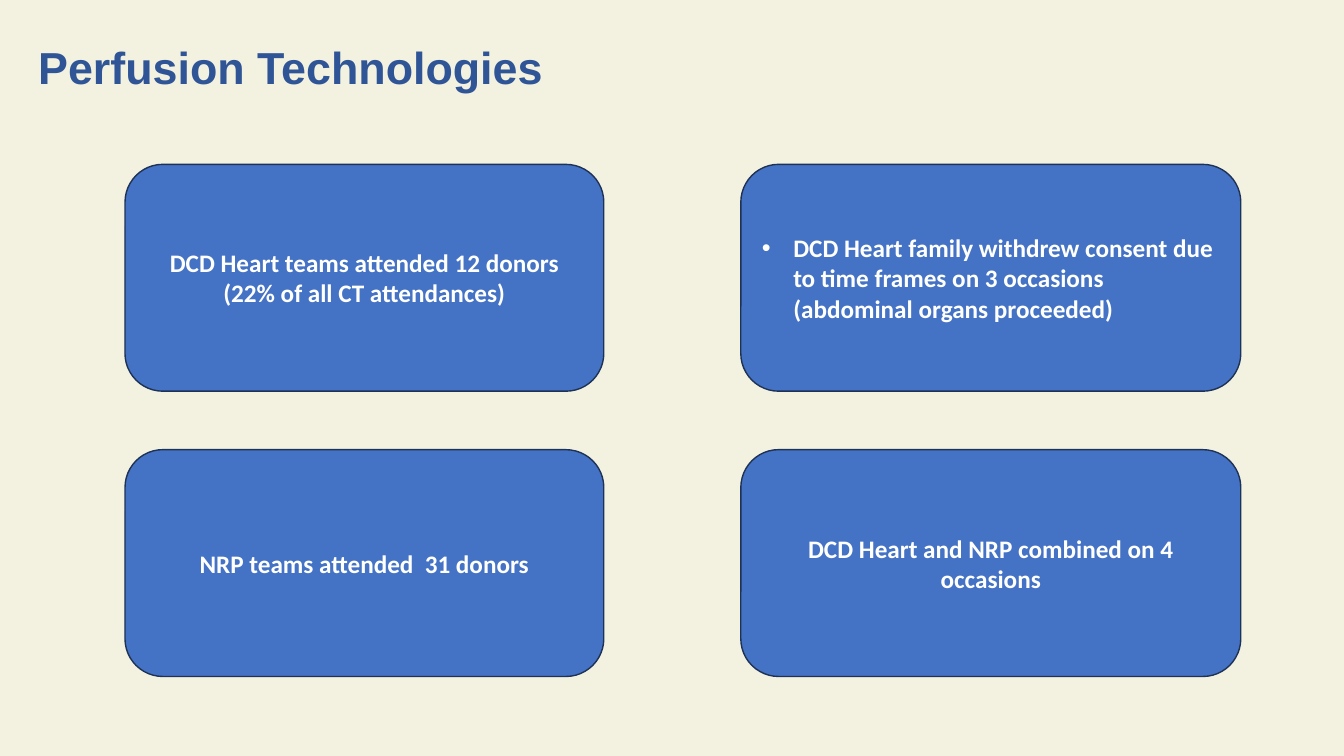
from lxml import etree
from pptx import Presentation
from pptx import util as u
from pptx.dml import color
from pptx.enum import shapes, text
from pptx.oxml import ns

TITLE = "Perfusion Technologies"
CARDS = [
    [
        {"lines": ["DCD Heart teams attended 12 donors", "(22% of all CT attendances)"]},
        {"lines": ["DCD Heart family withdrew consent due to time frames on 3 occasions "
                   "(abdominal organs proceeded)"], "bullet": "•"},
    ],
    [
        {"lines": ["NRP teams attended  31 donors"]},
        {"lines": ["DCD Heart and NRP combined on 4 occasions"]},
    ],
]
COLORS = {"background": "F3F2E1", "title": "2F5597", "card": "4472C4",
          "outline": "1E3256", "text": "FFFFFF"}
TITLE_FONT = {"name": "Arial", "size": u.Pt(32), "bold": True}
CARD_FONT = {"name": "Calibri", "size": u.Pt(18), "bold": True}
FRAME = {"word_wrap": True, "vertical_anchor": text.MSO_ANCHOR.MIDDLE}

COLUMNS = [(89.3, 342), (529.2, 357.1)]
CARD_TOP, CARD_HEIGHT, ROW_PITCH = 117.4, 162, 203.8
BULLET_INDENT = 22.5


def rgb(name):
    return color.RGBColor.from_string(COLORS[name])


def apply(target, values):
    for name, value in values.items():
        setattr(target, name, value)


def style_font(para, values, color_name):
    for span in para.runs:
        apply(span.font, values)
        span.font.color.rgb = rgb(color_name)


def add_bullet(para, symbol):
    properties = para._p.get_or_add_pPr()
    properties.set("marL", str(u.Pt(BULLET_INDENT)))
    properties.set("indent", str(-u.Pt(BULLET_INDENT)))
    etree.SubElement(properties, ns.qn("a:buFont")).set("typeface", "Arial")
    etree.SubElement(properties, ns.qn("a:buChar")).set("char", symbol)


def add_title(page):
    box = page.shapes.add_textbox(u.Pt(20.2), u.Pt(-2.2), u.Pt(718.6), u.Pt(104.4))
    apply(box.text_frame, FRAME)
    para = box.text_frame.paragraphs[0]
    para.text = TITLE
    para.line_spacing = 0.9
    style_font(para, TITLE_FONT, "title")


def add_card(page, card, left, top, width):
    box = page.shapes.add_shape(shapes.MSO_SHAPE.ROUNDED_RECTANGLE,
                                u.Pt(left), u.Pt(top), u.Pt(width), u.Pt(CARD_HEIGHT))
    box.shadow.inherit = False
    box.fill.solid()
    box.fill.fore_color.rgb = rgb("card")
    box.line.color.rgb = rgb("outline")
    box.line.width = u.Pt(1)
    apply(box.text_frame, FRAME)
    box.text_frame.text = "\n".join(card["lines"])
    for para in box.text_frame.paragraphs:
        if "bullet" in card:
            para.alignment = text.PP_ALIGN.LEFT
            add_bullet(para, card["bullet"])
        else:
            para.alignment = text.PP_ALIGN.CENTER
        style_font(para, CARD_FONT, "text")


def main():
    deck = Presentation()
    deck.slide_width, deck.slide_height = u.Pt(960), u.Pt(540)
    page = deck.slides.add_slide(deck.slide_layouts[6])
    page.background.fill.solid()
    page.background.fill.fore_color.rgb = rgb("background")
    add_title(page)
    for row, cards in enumerate(CARDS):
        for card, (left, width) in zip(cards, COLUMNS):
            add_card(page, card, left, CARD_TOP + row * ROW_PITCH, width)
    deck.save("out.pptx")


if __name__ == "__main__":
    main()
